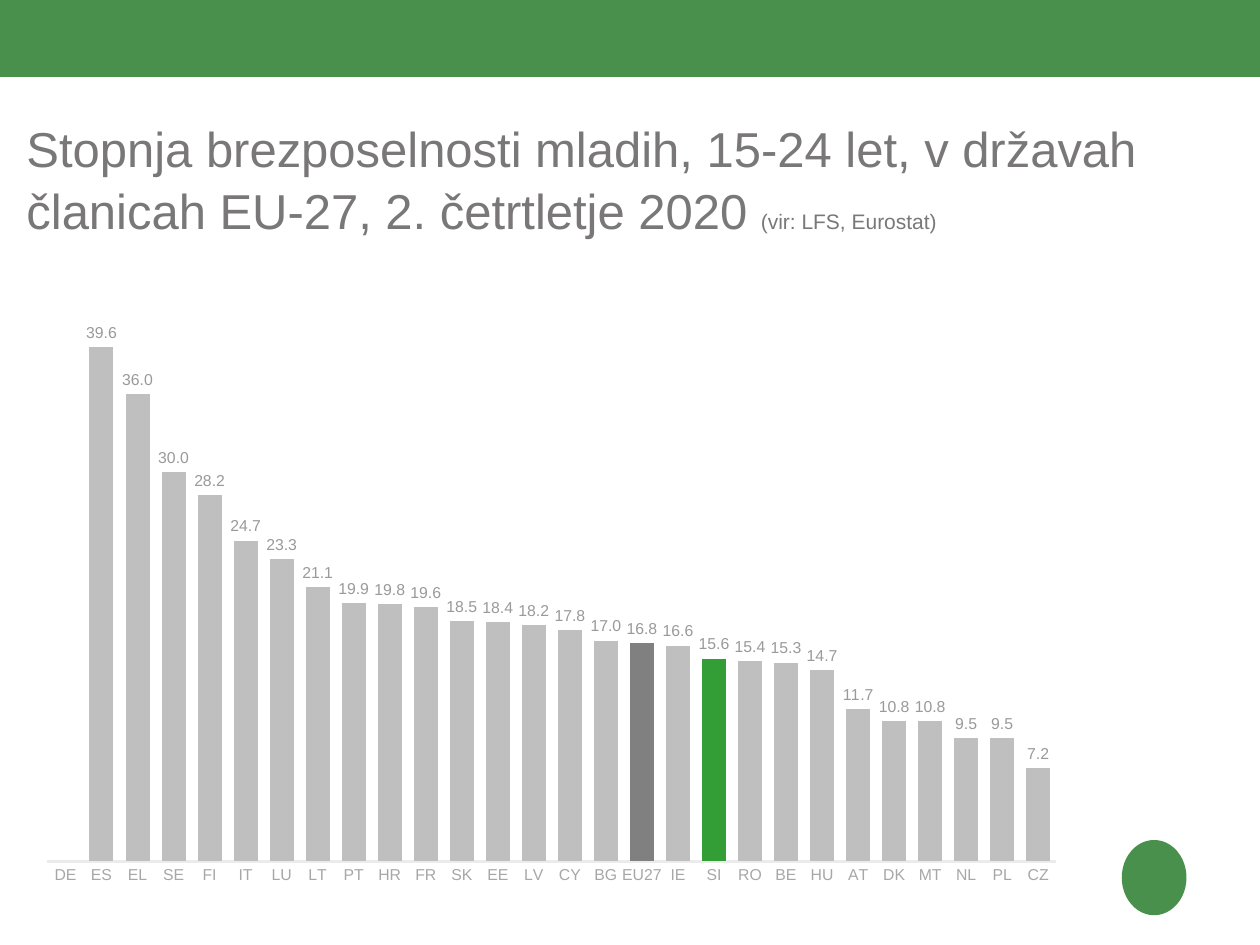
from lxml import etree
from pptx import Presentation
from pptx import util as u
from pptx.chart.data import CategoryChartData
from pptx.dml.color import RGBColor
from pptx.enum import chart as chart_enum, shapes, text
from pptx.oxml.ns import qn

GREEN = "49904D"
BAR_COLOR = "BFBFBF"
HIGHLIGHTS = {"EU27": "808080", "SI": "339E35"}
RATES = {
    "DE": None, "ES": 39.6, "EL": 36.0, "SE": 30.0, "FI": 28.2, "IT": 24.7, "LU": 23.3,
    "LT": 21.1, "PT": 19.9, "HR": 19.8, "FR": 19.6, "SK": 18.5, "EE": 18.4, "LV": 18.2,
    "CY": 17.8, "BG": 17.0, "EU27": 16.8, "IE": 16.6, "SI": 15.6, "RO": 15.4, "BE": 15.3,
    "HU": 14.7, "AT": 11.7, "DK": 10.8, "MT": 10.8, "NL": 9.5, "PL": 9.5, "CZ": 7.2,
}


def color(value):
    return RGBColor.from_string(value)


def set_attributes(target, values):
    for name, value in values.items():
        setattr(target, name, value)


def format_font(font, size, hex_color):
    set_attributes(font, {"name": "Arial", "size": u.Pt(size), "bold": False})
    font.color.rgb = color(hex_color)


def fill_solid(fill, hex_color):
    fill.solid()
    fill.fore_color.rgb = color(hex_color)


def place(shape, left, top, width, height):
    box = {"left": left, "top": top, "width": width, "height": height}
    set_attributes(shape, {name: u.Pt(value) for name, value in box.items()})


def add_plain_shape(slide, kind, left, top, width, height):
    shape = slide.shapes.add_shape(kind, *map(u.Pt, (left, top, width, height)))
    shape.shadow.inherit = False
    fill_solid(shape.fill, GREEN)
    shape.line.fill.background()


def format_title(title):
    place(title, 15.12, 66.24, 666.72, 51.12)
    frame = title.text_frame
    set_attributes(frame, {
        "margin_left": 0, "margin_top": 0, "margin_right": 0, "margin_bottom": 0,
        "word_wrap": True, "auto_size": text.MSO_AUTO_SIZE.NONE,
        "vertical_anchor": text.MSO_ANCHOR.TOP,
    })
    paragraph = frame.paragraphs[0]
    set_attributes(paragraph, {"alignment": text.PP_ALIGN.LEFT, "line_spacing": 1.05})
    for wording, size in (
        ("Stopnja brezposelnosti mladih, 15-24 let, v državah članicah EU-27, "
         "2. četrtletje 2020 ", 28),
        ("(vir: LFS, Eurostat)", 12),
    ):
        run = paragraph.add_run()
        run.text = wording
        format_font(run.font, size, "797777")


def set_plot_area(chart, **fractions):
    """Fix the inner plot area, given as fractions of the chart's size."""
    plot_area = chart._chartSpace.find(".//" + qn("c:plotArea"))
    for layout in plot_area.findall(qn("c:layout")):
        plot_area.remove(layout)
    layout = etree.Element(qn("c:layout"))
    manual = etree.SubElement(layout, qn("c:manualLayout"))
    settings = {"layoutTarget": "inner", "xMode": "edge", "yMode": "edge", **fractions}
    for name, value in settings.items():
        etree.SubElement(manual, qn("c:" + name)).set("val", str(value))
    plot_area.insert(0, layout)


def format_axes(chart):
    no_ticks = {
        "has_major_gridlines": False,
        "major_tick_mark": chart_enum.XL_TICK_MARK.NONE,
        "minor_tick_mark": chart_enum.XL_TICK_MARK.NONE,
    }
    for axis in (chart.category_axis, chart.value_axis):
        set_attributes(axis, no_ticks)
        format_font(axis.tick_labels.font, 9, "A8A7A7")
    line = chart.category_axis.format.line
    line.width = u.Pt(1.5)
    line.color.rgb = color("EBEBEB")
    set_attributes(chart.value_axis, {
        "minimum_scale": 0, "maximum_scale": 45,
        "tick_label_position": chart_enum.XL_TICK_LABEL_POSITION.NONE,
    })
    chart.value_axis.format.line.fill.background()


def format_bars(plot):
    set_attributes(plot, {"gap_width": 50, "overlap": -27, "vary_by_categories": False,
                          "has_data_labels": True})
    set_attributes(plot.data_labels, {
        "show_value": True, "number_format": "0.0", "number_format_is_linked": False,
        "position": chart_enum.XL_LABEL_POSITION.OUTSIDE_END,
    })
    format_font(plot.data_labels.font, 9, "9B9999")
    series = plot.series[0]
    fill_solid(series.format.fill, BAR_COLOR)
    countries = list(RATES)
    for country, hex_color in HIGHLIGHTS.items():
        fill_solid(series.points[countries.index(country)].format.fill, hex_color)


def add_rate_chart(slide):
    data = CategoryChartData(number_format="0.0")
    data.categories = list(RATES)
    data.add_series("Series 1", RATES.values())
    chart = slide.shapes.add_chart(
        chart_enum.XL_CHART_TYPE.COLUMN_CLUSTERED,
        *map(u.Pt, (15.12, 151.2, 600.48, 362.88)), data).chart
    set_attributes(chart, {"has_legend": False, "has_title": False})
    format_font(chart.font, 10, "797777")
    format_axes(chart)
    format_bars(chart.plots[0])
    set_plot_area(chart, x=0.02, y=0.02, w=0.96, h=0.92)


def main():
    presentation = Presentation()
    set_attributes(presentation, {"slide_width": u.Pt(720), "slide_height": u.Pt(540)})
    slide = presentation.slides.add_slide(presentation.slide_layouts[5])
    add_plain_shape(slide, shapes.MSO_SHAPE.RECTANGLE, 0, 0, 720, 44)
    add_plain_shape(slide, shapes.MSO_SHAPE.OVAL, 641, 480, 37, 43)
    format_title(slide.shapes.title)
    add_rate_chart(slide)
    presentation.save("out.pptx")


if __name__ == "__main__":
    main()
